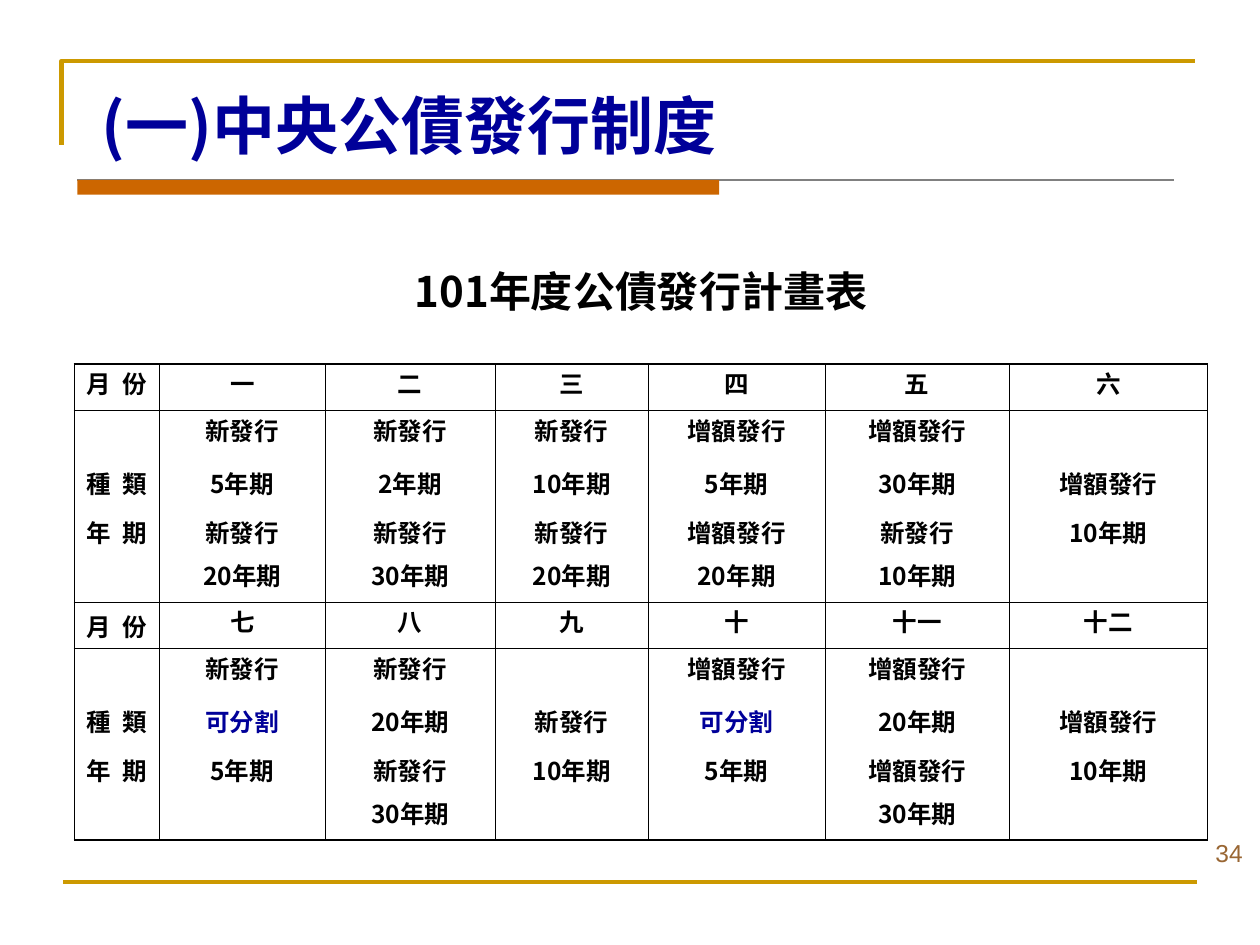
from lxml import etree
from pptx import Presentation
from pptx import util as u
from pptx.dml.color import RGBColor
from pptx.enum import shapes, text
from pptx.oxml.ns import qn

FONT = "Noto Sans CJK SC"
COLORS = {"gold": "CC9900", "orange": "CC6600", "gray": "808080", "navy": "000099",
          "black": "000000", "brown": "996633"}
TITLE = "(一)中央公債發行制度"
CAPTION = "101年度公債發行計畫表"
PAGE_NUMBER = "34"
LABELS = ["月  份", "", "種  類", "年  期", ""]
HALVES = [
    [("一", "新發行", "5年期", "新發行", "20年期"),
     ("二", "新發行", "2年期", "新發行", "30年期"),
     ("三", "新發行", "10年期", "新發行", "20年期"),
     ("四", "增額發行", "5年期", "增額發行", "20年期"),
     ("五", "增額發行", "30年期", "新發行", "10年期"),
     ("六", "", "增額發行", "10年期", "")],
    [("七", "新發行", "可分割", "5年期", ""),
     ("八", "新發行", "20年期", "新發行", "30年期"),
     ("九", "", "新發行", "10年期", ""),
     ("十", "增額發行", "可分割", "5年期", ""),
     ("十一", "增額發行", "20年期", "增額發行", "30年期"),
     ("十二", "", "增額發行", "10年期", "")],
]
HIGHLIGHT = "可分割"
COLUMN_WIDTHS = [48.5, 95, 97, 87.5, 101, 105.5, 113]
CAPTION_HEIGHT = 96.5
HALF_HEIGHTS = [26.7, 26.7, 28, 28, 26.7]
OUTER, INNER = 1, 0.5


def color(name):
    return RGBColor.from_string(COLORS[name])


def style(para, size, ink, bold=True, face=FONT):
    font = para.font
    font.size, font.bold, font.name = u.Pt(size), bold, face
    font.color.rgb = color(ink)
    etree.SubElement(font._element, qn("a:ea"), typeface=face)


def add_line(page, start, end, ink, width):
    line = page.shapes.add_connector(shapes.MSO_CONNECTOR.STRAIGHT,
                                     *(u.Pt(v) for v in start + end))
    line.line.color.rgb = color(ink)
    line.line.width = u.Pt(width)
    etree.SubElement(line._element.spPr, qn("a:effectLst"))


def add_text(page, left, top, width, height, words):
    box = page.shapes.add_textbox(u.Pt(left), u.Pt(top), u.Pt(width), u.Pt(height))
    box.text_frame.word_wrap = True
    para = box.text_frame.paragraphs[0]
    para.text = words
    return box.text_frame, para


def set_borders(cell, widths):
    props = cell._tc.get_or_add_tcPr()
    for index, (side, width) in enumerate(zip("LRTB", widths)):
        line = etree.Element(qn(f"a:ln{side}"), w=str(u.Pt(width)))
        if width:
            fill = etree.SubElement(line, qn("a:solidFill"))
            etree.SubElement(fill, qn("a:srgbClr"), val=COLORS["black"])
        else:
            etree.SubElement(line, qn("a:noFill"))
        props.insert(index, line)


def fill_cell(cell, words, size, ink="black", middle=False, top=0.7):
    cell.fill.background()
    cell.margin_left = cell.margin_right = u.Pt(0.7)
    cell.margin_top, cell.margin_bottom = u.Pt(top), 0
    cell.vertical_anchor = text.MSO_ANCHOR.MIDDLE if middle else text.MSO_ANCHOR.TOP
    para = cell.text_frame.paragraphs[0]
    if words:
        para.text = words
    para.alignment = text.PP_ALIGN.CENTER
    style(para, size, ink)


def add_schedule(page):
    heights = [CAPTION_HEIGHT] + HALF_HEIGHTS * len(HALVES)
    frame = page.shapes.add_table(len(heights), len(COLUMN_WIDTHS), u.Pt(42.5), u.Pt(111.6),
                                  u.Pt(sum(COLUMN_WIDTHS)), u.Pt(sum(heights)))
    table = frame.table
    table.first_row = table.horz_banding = False
    for column, width in zip(table.columns, COLUMN_WIDTHS):
        column.width = u.Pt(width)
    for row, height in zip(table.rows, heights):
        row.height = u.Pt(height)

    caption = table.cell(0, 0)
    caption.merge(table.cell(0, len(COLUMN_WIDTHS) - 1))
    fill_cell(caption, CAPTION, 24, top=36)
    for column in range(len(COLUMN_WIDTHS)):
        set_borders(table.cell(0, column), (0, 0, 0, OUTER))

    count = len(LABELS)
    last_column, last_row = len(COLUMN_WIDTHS) - 1, len(heights) - 1
    for half, months in enumerate(HALVES):
        for column, entries in enumerate([LABELS] + months):
            for step, words in enumerate(entries):
                row = 1 + half * count + step
                cell = table.cell(row, column)
                middle = step in (2, 3) or (half == 1 and step == column == 0)
                fill_cell(cell, words, 14, "navy" if words == HIGHLIGHT else "black", middle)
                set_borders(cell, (
                    OUTER if column == 0 else INNER,
                    OUTER if column == last_column else INNER,
                    OUTER if row == 1 else INNER if step < 2 else 0,
                    OUTER if row == last_row else INNER if step in (0, count - 1) else 0))


def main():
    deck = Presentation()
    deck.slide_width, deck.slide_height = u.Pt(720), u.Pt(540)
    page = deck.slides.add_slide(deck.slide_layouts[6])

    builder = page.shapes.build_freeform(u.Pt(35.2), u.Pt(82.8))
    builder.add_line_segments([(u.Pt(35.2), u.Pt(34.8)), (u.Pt(683), u.Pt(34.8))], close=False)
    corner = builder.convert_to_shape()
    corner.shadow.inherit = False
    corner.fill.background()
    corner.line.color.rgb = color("gold")
    corner.line.width = u.Pt(2.5)
    add_line(page, (36, 504), (684, 504), "gold", 2)

    add_schedule(page)

    add_line(page, (44.2, 102.8), (671, 102.8), "gray", 0.75)
    bar = page.shapes.add_shape(shapes.MSO_SHAPE.RECTANGLE, u.Pt(44.2), u.Pt(102.8),
                                u.Pt(366.8), u.Pt(8.5))
    bar.shadow.inherit = False
    bar.fill.solid()
    bar.fill.fore_color.rgb = color("orange")
    bar.line.fill.background()

    frame, para = add_text(page, 549.4, 463, 167.8, 36, PAGE_NUMBER)
    frame.vertical_anchor = text.MSO_ANCHOR.BOTTOM
    para.alignment = text.PP_ALIGN.RIGHT
    style(para, 14, "brown", bold=False, face="Arial")

    frame, para = add_text(page, 42.5, 43.9, 648, 55.4, TITLE)
    frame.margin_left = u.Pt(15.8)
    para.line_spacing = u.Pt(45)
    style(para, 36, "navy")

    deck.save("out.pptx")


if __name__ == "__main__":
    main()
